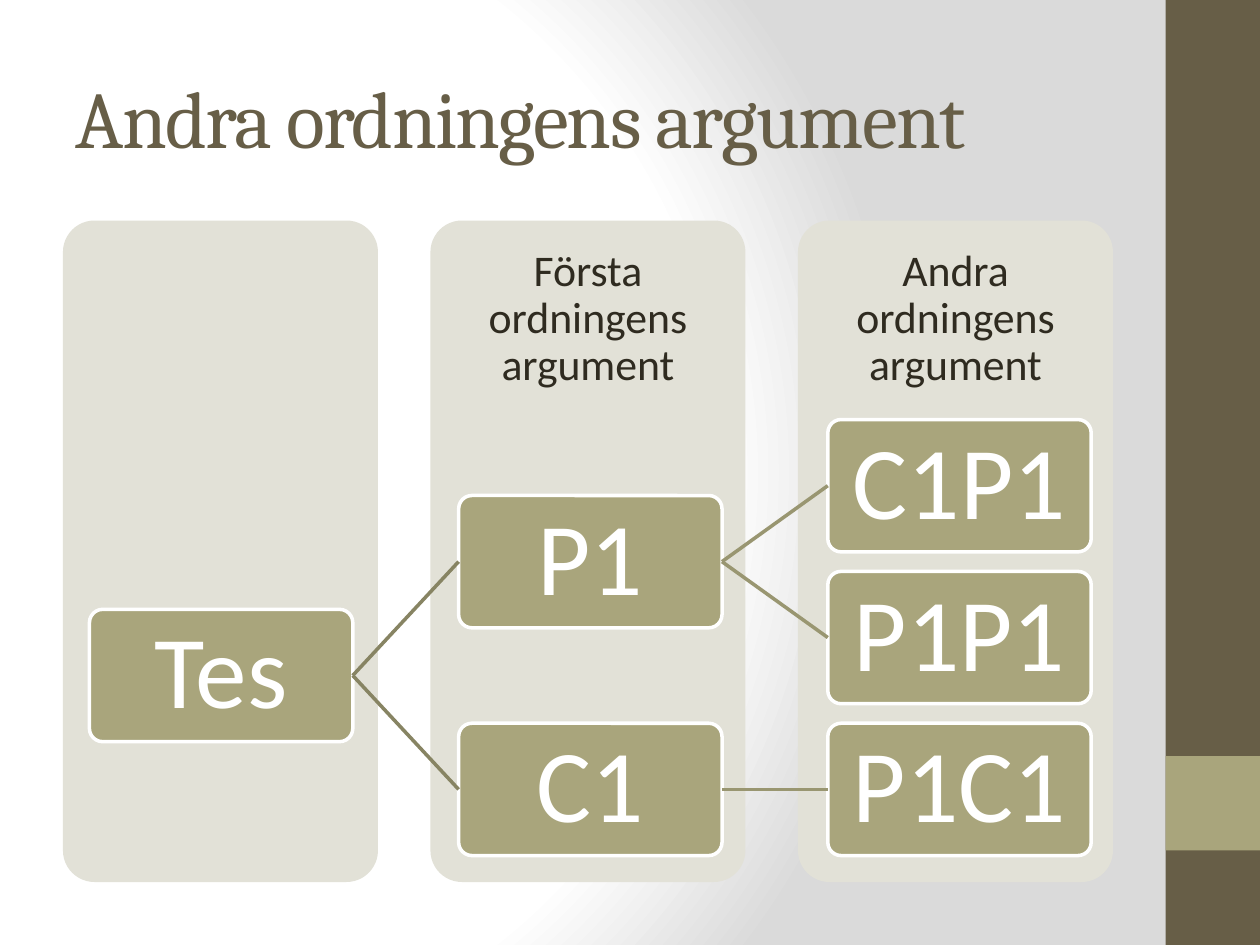
"""Build a slide with a tree of first and second order arguments."""
from dataclasses import dataclass

from lxml.etree import SubElement
from pptx import Presentation
from pptx.dml.color import RGBColor
from pptx.enum.shapes import MSO_CONNECTOR, MSO_SHAPE
from pptx.enum.text import MSO_ANCHOR, MSO_AUTO_SIZE, PP_ALIGN
from pptx.oxml import parse_xml
from pptx.oxml.ns import nsdecls, qn
from pptx.shapes.autoshape import Shape
from pptx.slide import Slide
from pptx.text.text import TextFrame
from pptx.util import Inches, Pt


@dataclass(frozen=True)
class Theme:
    """Colours, fonts and type sizes."""
    dark: str = "675E47"
    olive: str = "A9A57C"
    panel: str = "E2E1D7"
    ink: str = "2F2B20"
    white: str = "FFFFFF"
    grey: str = "DADADA"
    links: tuple[str, ...] = ("878463", "999671")
    head: str = "Cambria"
    body: str = "Calibri"
    title: float = 46
    label: float = 25
    node: float = 59
    line: float = 2


@dataclass(frozen=True)
class Node:
    """A box in the tree, placed by column and row."""
    text: str
    col: int
    row: float
    root: str = ""


THEME = Theme()
HEADS = ("", "Första ordningens argument", "Andra ordningens argument")
NODES = (
    Node("Tes", 0, 1.25),
    Node("P1", 1, 0.5, "Tes"),
    Node("C1P1", 2, 0, "P1"),
    Node("P1P1", 2, 1, "P1"),
    Node("C1", 1, 2, "Tes"),
    Node("P1C1", 2, 2, "C1"),
)
LEFT, RIGHT = 1, 3
STEP = (5.74 - 3.33) / 2


def rgb(code: str) -> RGBColor:
    """Turn a hex code into a colour."""
    return RGBColor.from_string(code)


def write(frame: TextFrame, text: str, size: float, code: str, inset: float) -> None:
    """Set centred body text in a frame."""
    frame.word_wrap = True
    frame.auto_size = MSO_AUTO_SIZE.NONE
    frame.vertical_anchor = MSO_ANCHOR.MIDDLE
    frame.margin_left = frame.margin_right = Inches(inset)
    frame.margin_top = frame.margin_bottom = Inches(inset)
    frame.text = text
    para = frame.paragraphs[0]
    para.alignment = PP_ALIGN.CENTER
    para.line_spacing = 0.9
    font = para.runs[0].font
    font.name, font.size = THEME.body, Pt(size)
    font.color.rgb = rgb(code)


def block(slide: Slide, kind: MSO_SHAPE, at: tuple[float, ...], code: str) -> Shape:
    """Add a flat filled shape without an outline."""
    shape = slide.shapes.add_shape(kind, *map(Inches, at))
    shape.shadow.inherit = False
    shape.fill.solid()
    shape.fill.fore_color.rgb = rgb(code)
    shape.line.fill.background()
    if kind == MSO_SHAPE.ROUNDED_RECTANGLE:
        shape.adjustments[0] = 0.1
    return shape


def panel(slide: Slide, col: int, text: str) -> None:
    """Add a column panel and its heading."""
    left = 0.5 + col * 35 / 12
    block(slide, MSO_SHAPE.ROUNDED_RECTANGLE, (left, 1.75, 2.5, 5.25), THEME.panel)
    if text:
        box = slide.shapes.add_textbox(*map(Inches, (left, 1.75, 2.5, 1.57)))
        write(box.text_frame, text, THEME.label, THEME.ink, 0.19)


def card(slide: Slide, node: Node) -> Shape:
    """Add the box of a node."""
    at = (0.71 + 2.93 * node.col, 3.33 + STEP * node.row, 2.09, 1.05)
    shape = block(slide, MSO_SHAPE.ROUNDED_RECTANGLE, at, THEME.olive)
    shape.line.color.rgb = rgb(THEME.white)
    shape.line.width = Pt(THEME.line)
    write(shape.text_frame, node.text, THEME.node, THEME.white, 0.04)
    return shape


def link(slide: Slide, start: Shape, end: Shape, code: str) -> None:
    """Join two boxes with a line."""
    line = slide.shapes.add_connector(MSO_CONNECTOR.STRAIGHT, 0, 0, 0, 0)
    line.begin_connect(start, RIGHT)
    line.end_connect(end, LEFT)
    line.line.color.rgb = rgb(code)
    line.line.width = Pt(THEME.line)
    SubElement(line.element.spPr, qn("a:effectLst"))


def backdrop(slide: Slide) -> None:
    """Set the round gradient behind the slide."""
    slide.background.fill.solid()
    stops = ((0, THEME.white), (75, THEME.white), (100, THEME.grey))
    marks = "".join(
        f'<a:gs pos="{pos * 1000}"><a:srgbClr val="{code}"/></a:gs>'
        for pos, code in stops
    )
    base = slide.element.find(".//" + qn("p:bgPr"))
    base.replace(base[0], parse_xml(
        f'<a:gradFill {nsdecls("a")} rotWithShape="1"><a:gsLst>{marks}</a:gsLst>'
        '<a:path path="circle">'
        '<a:fillToRect l="20000" t="50000" r="100000" b="50000"/>'
        '</a:path></a:gradFill>'
    ))


def heading(slide: Slide, text: str) -> None:
    """Place and format the title."""
    title = slide.shapes.title
    title.left, title.top = Inches(0.5), Inches(0.3)
    title.width, title.height = Inches(8.33), Inches(1.25)
    frame = title.text_frame
    frame.text = text
    frame.auto_size = MSO_AUTO_SIZE.NONE
    frame.vertical_anchor = MSO_ANCHOR.MIDDLE
    para = frame.paragraphs[0]
    para.alignment = PP_ALIGN.LEFT
    font = para.runs[0].font
    font.name, font.size = THEME.head, Pt(THEME.title)
    font.color.rgb = rgb(THEME.dark)
    para.runs[0].font._element.set("spc", "-100")


def main() -> None:
    """Build and save the slide."""
    deck = Presentation()
    deck.slide_width, deck.slide_height = Inches(10), Inches(7.5)
    slide = deck.slides.add_slide(deck.slide_layouts.get_by_name("Title Only"))
    backdrop(slide)
    block(slide, MSO_SHAPE.RECTANGLE, (9.25, 0, 0.75, 7.5), THEME.dark)
    block(slide, MSO_SHAPE.RECTANGLE, (9.25, 6, 0.75, 0.75), THEME.olive)
    heading(slide, "Andra ordningens argument")
    for col, text in enumerate(HEADS):
        panel(slide, col, text)
    cards = {node.text: card(slide, node) for node in NODES}
    for node in NODES:
        if node.root:
            code = THEME.links[node.col - 1]
            link(slide, cards[node.root], cards[node.text], code)
    deck.save("out.pptx")


if __name__ == "__main__":
    main()
